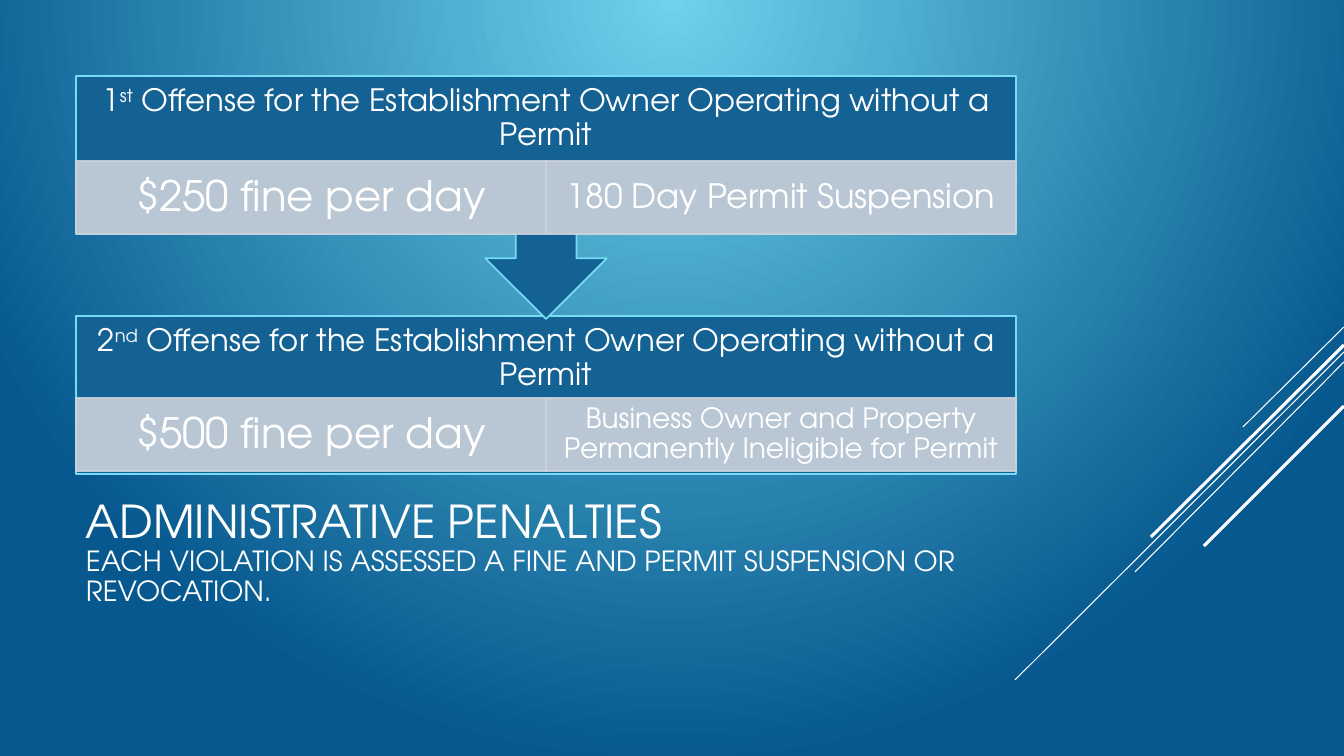
from lxml.etree import SubElement
from pptx import Presentation
from pptx.dml.color import RGBColor
from pptx.enum.shapes import MSO_CONNECTOR, MSO_SHAPE
from pptx.enum.text import MSO_ANCHOR, MSO_AUTO_SIZE, PP_ALIGN
from pptx.oxml.ns import qn
from pptx.util import Emu, Pt

WHITE = RGBColor(0xFF, 0xFF, 0xFF)
NAVY = RGBColor(0x14, 0x61, 0x94)
AQUA = RGBColor(0x76, 0xDB, 0xF4)
GREY = RGBColor(0xCC, 0xD2, 0xDC)
GLOW = RGBColor(0x6E, 0xD2, 0xEB)
DEEP = RGBColor(0x06, 0x58, 0x8E)
FONT = "TeX Gyre Adventor"
PX = 914400 / 100.8
LEFT, WIDTH, HEADER_H, CELL_H = 76, 940, 85, 73


def px(*lengths):
    return [Emu(round(n * PX)) for n in lengths]


def write(sp, runs, align, anchor, insets):
    tf = sp.text_frame
    sides = ("margin_left", "margin_top", "margin_right", "margin_bottom")
    frame = dict(zip(sides, px(*insets)), word_wrap=True,
                 auto_size=MSO_AUTO_SIZE.NONE, vertical_anchor=anchor)
    for name, value in frame.items():
        setattr(tf, name, value)
    p = tf.paragraphs[0]
    p.alignment, p.line_spacing = align, 0.9
    for i, (text, size, baseline) in enumerate(runs):
        if i and size != runs[i - 1][1]:
            p.add_line_break()
        r = p.add_run()
        r.text = text
        for name, value in {"name": FONT, "size": Pt(size)}.items():
            setattr(r.font, name, value)
        r.font.color.rgb = WHITE
        if baseline:
            r._r.get_or_add_rPr().set("baseline", str(baseline * 1000))


prs = Presentation()
prs.slide_width, prs.slide_height = px(1344, 756)
s = prs.slides.add_slide(prs.slide_layouts[5])

fill = s.background.fill
fill.gradient()
for stop, color in zip(fill.gradient_stops, (GLOW, DEEP)):
    stop.color.rgb = color
grad = s.background._cSld.find(".//" + qn("a:gradFill"))
grad.remove(grad.find(qn("a:lin")))
circle = SubElement(grad, qn("a:path"), path="circle")
SubElement(circle, qn("a:fillToRect"), l="0", t="0", r="0", b="100000")

for y1, x2, y2, weight in [(327, 1243, 427, 0.75), (352, 1015, 680, 0.75),
                           (362, 1135, 572, 0.75), (345, 1151, 537, 2.25),
                           (406, 1204, 546, 2.25)]:
    line = s.shapes.add_connector(MSO_CONNECTOR.STRAIGHT, *px(1344, y1, x2, y2))
    line.line.color.rgb = WHITE
    line.line.width = Pt(weight)
    SubElement(line._element.spPr, qn("a:effectLst"))

title = s.shapes.title
title.left, title.top, title.width, title.height = px(LEFT, 495, WIDTH, 166)
write(title, [("ADMINISTRATIVE PENALTIES", 32.4, 0),
              ("EACH VIOLATION IS ASSESSED A FINE AND PERMIT SUSPENSION OR REVOCATION.", 19.8, 0)],
      PP_ALIGN.LEFT, MSO_ANCHOR.TOP, (10, 4, 10, 4))

offenses = [
    (MSO_SHAPE.RECTANGLE, 0, 316, 158, 398, "2", "nd",
     [("$500 fine per day", 30, 23),
      ("Business Owner and Property Permanently Ineligible for Permit", 20, 16)]),
    (MSO_SHAPE.UP_ARROW_CALLOUT, 180, 76, 243, 161, "1", "st",
     [("$250 fine per day", 30, 23), ("180 Day Permit Suspension", 24, 19)]),
]
for kind, rotation, top, height, cell_top, number, suffix, penalties in offenses:
    panel = s.shapes.add_shape(kind, *px(LEFT, top, WIDTH, height))
    panel.rotation = rotation
    panel.shadow.inherit = False
    panel.fill.solid()
    panel.fill.fore_color.rgb = NAVY
    panel.line.color.rgb = AQUA
    panel.line.width = Pt(1.25)

    header = s.shapes.add_textbox(*px(LEFT, top, WIDTH, HEADER_H))
    write(header, [(number, 22, 0), (suffix, 22, 30),
                   (" Offense for the Establishment Owner Operating without a Permit", 22, 0)],
          PP_ALIGN.CENTER, MSO_ANCHOR.MIDDLE, (17, 17, 17, 17))

    for col, (text, size, inset) in enumerate(penalties):
        cell = s.shapes.add_shape(MSO_SHAPE.RECTANGLE, *px(
            LEFT + col * WIDTH // 2, cell_top, WIDTH // 2, CELL_H))
        cell.shadow.inherit = False
        cell.fill.solid()
        cell.fill.fore_color.rgb = GREY
        cell.line.color.rgb = GREY
        cell.line.width = Pt(1.25)
        for color in cell._element.spPr.iter(qn("a:srgbClr")):
            SubElement(color, qn("a:alpha"), val="90000")
        write(cell, [(text, size, 0)], PP_ALIGN.CENTER, MSO_ANCHOR.MIDDLE,
              (inset, 3, inset, 3))

prs.save("out.pptx")
